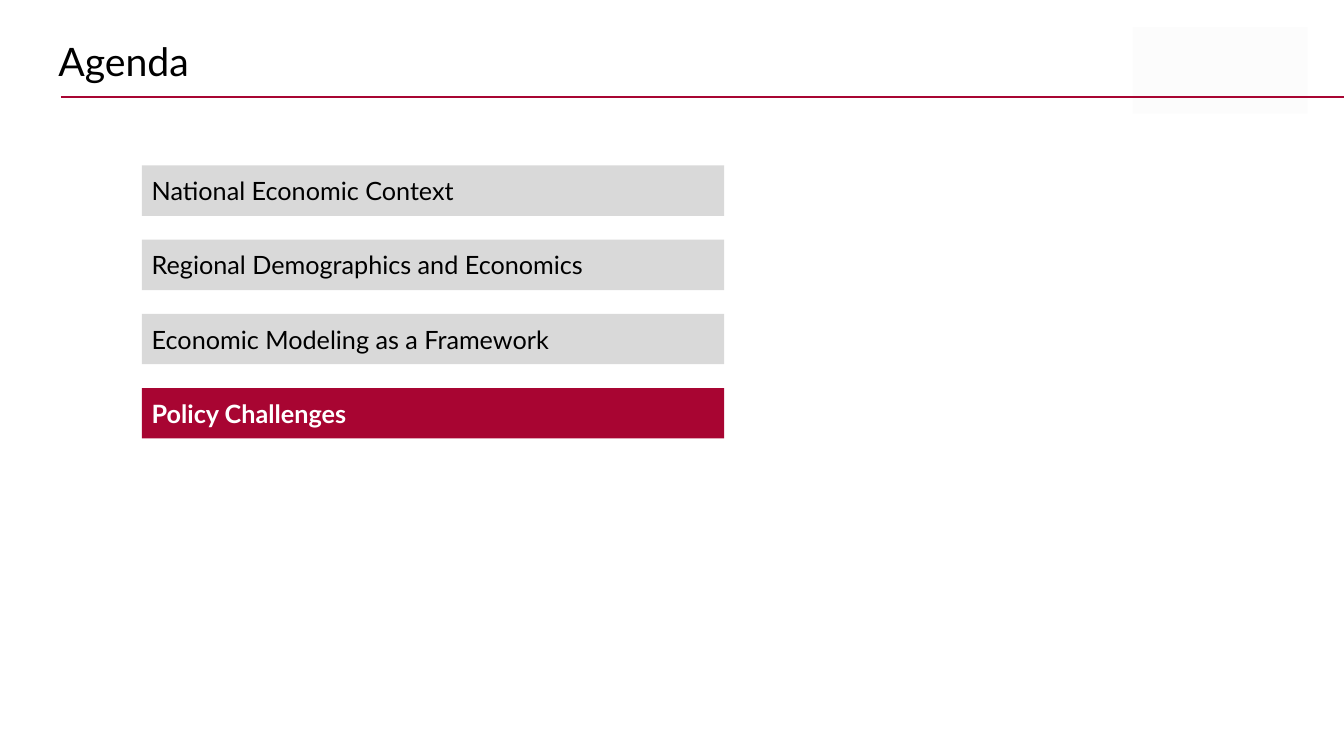
from dataclasses import dataclass

from lxml import etree
from pptx import Presentation
from pptx import util as u
from pptx.dml.color import RGBColor
from pptx.enum import shapes, text
from pptx.oxml import ns


@dataclass(frozen=True)
class Theme:
    """Colours, font and type sizes of the deck."""
    crimson: str = "A80532"
    grey: str = "D9D9D9"
    pale: str = "FCFCFC"
    black: str = "000000"
    white: str = "FFFFFF"
    font: str = "Lato"
    title_size: int = 28
    item_size: int = 18


def write(frame, words, font, size, color, bold=False, anchor=text.MSO_ANCHOR.TOP):
    """Write one left-aligned paragraph into a text frame."""
    frame.word_wrap = True
    frame.vertical_anchor = anchor
    para = frame.paragraphs[0]
    para.alignment = text.PP_ALIGN.LEFT
    span = para.add_run()
    span.text = words
    span.font.name = font
    span.font.size = u.Pt(size)
    span.font.bold = bold
    span.font.color.rgb = RGBColor.from_string(color)


class Painter:
    """Draws themed elements on the current page, with lengths in points."""

    def __init__(self, page, theme):
        self.page = page
        self.theme = theme

    def block(self, left, top, width, height, fill):
        """Add a plain filled rectangle."""
        box = self.page.shapes.add_shape(
            shapes.MSO_SHAPE.RECTANGLE, u.Pt(left), u.Pt(top), u.Pt(width), u.Pt(height))
        box.shadow.inherit = False
        box.fill.solid()
        box.fill.fore_color.rgb = RGBColor.from_string(fill)
        box.line.fill.background()
        return box

    def rule(self, left, right, top, weight):
        """Add a horizontal crimson line."""
        line = self.page.shapes.add_connector(
            shapes.MSO_CONNECTOR.STRAIGHT, u.Pt(left), u.Pt(top), u.Pt(right), u.Pt(top))
        line.line.width = u.Pt(weight)
        line.line.color.rgb = RGBColor.from_string(self.theme.crimson)
        etree.SubElement(line._element.spPr, ns.qn("a:effectLst"))

    def title(self, words, left, top, width, height):
        """Add the page title."""
        box = self.page.shapes.add_textbox(u.Pt(left), u.Pt(top), u.Pt(width), u.Pt(height))
        write(box.text_frame, words, self.theme.font, self.theme.title_size, self.theme.black)
        box.text_frame.auto_size = text.MSO_AUTO_SIZE.SHAPE_TO_FIT_TEXT

    def item(self, words, left, top, width, height, current):
        """Add an agenda bar, highlighted when it is current."""
        theme = self.theme
        box = self.block(left, top, width, height, theme.crimson if current else theme.grey)
        write(box.text_frame, words, theme.font, theme.item_size,
              theme.white if current else theme.black,
              bold=current, anchor=text.MSO_ANCHOR.MIDDLE)


def main():
    """Build and save the agenda slide."""
    deck = Presentation()
    deck.slide_width, deck.slide_height = u.Pt(960), u.Pt(540)
    theme = Theme()
    painter = Painter(deck.slides.add_slide(deck.slide_layouts[6]), theme)

    painter.block(809.3, 19.4, 124.6, 61.9, theme.pale)
    painter.rule(43.5, 960, 69.3, 1.5)
    painter.title("Agenda", 34.6, 23, 733, 41)

    topics = ["National Economic Context", "Regional Demographics and Economics",
              "Economic Modeling as a Framework", "Policy Challenges"]
    for index, topic in enumerate(topics):
        painter.item(topic, 101.3, 118.2 + 53 * index, 416, 36,
                     current=topic == "Policy Challenges")

    deck.save("out.pptx")


if __name__ == "__main__":
    main()
